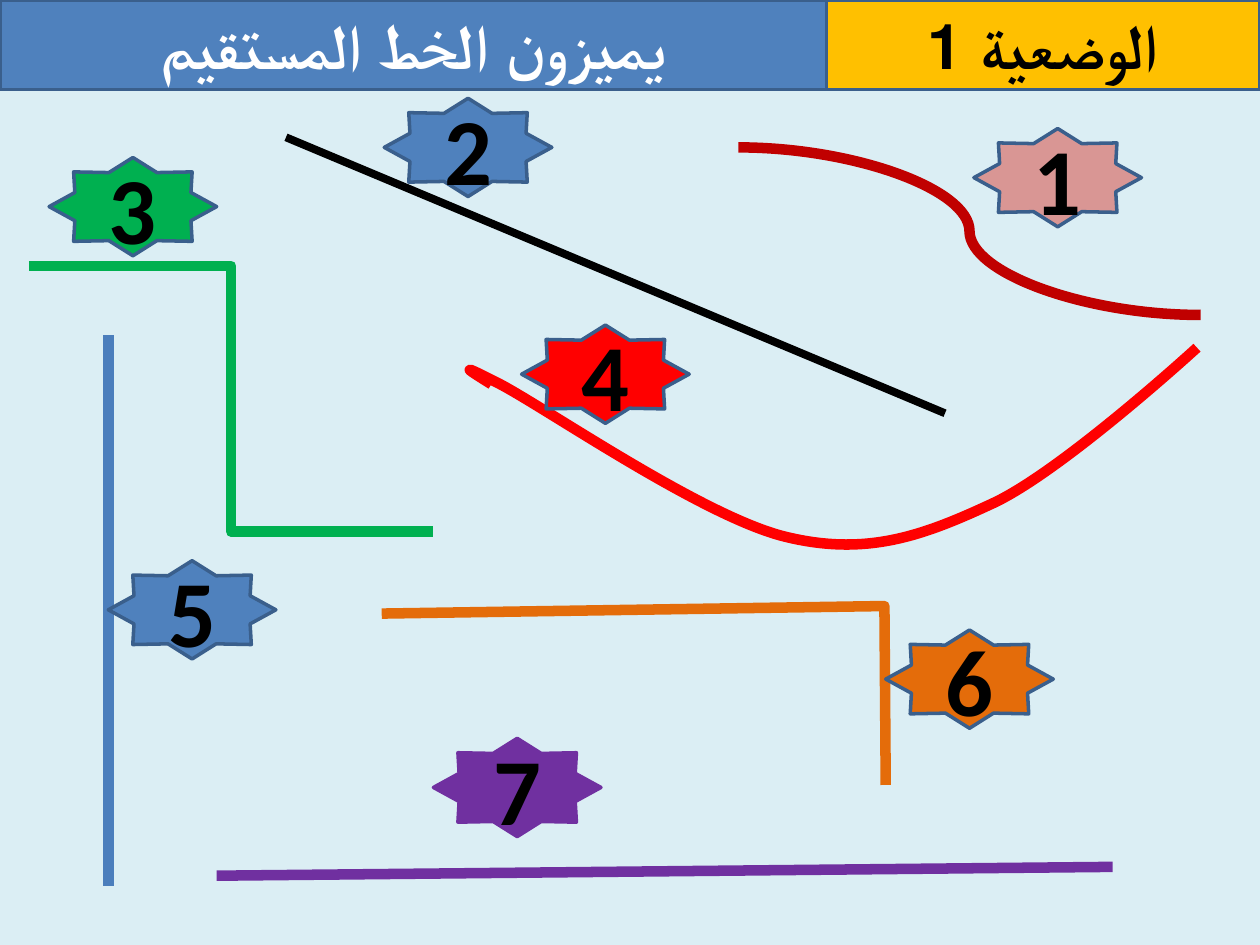
from lxml import etree
from pptx import Presentation
from pptx.dml.color import RGBColor
from pptx.enum.shapes import MSO_CONNECTOR, MSO_SHAPE
from pptx.enum.text import MSO_ANCHOR, MSO_AUTO_SIZE, PP_ALIGN
from pptx.oxml.ns import qn
from pptx.util import Inches, Pt

RECTANGLE, STAR = MSO_SHAPE.RECTANGLE, MSO_SHAPE.STAR_8_POINT
STRAIGHT, ELBOW, CURVE = MSO_CONNECTOR.STRAIGHT, MSO_CONNECTOR.ELBOW, MSO_CONNECTOR.CURVE
CENTER, TOP, MIDDLE = PP_ALIGN.CENTER, MSO_ANCHOR.TOP, MSO_ANCHOR.MIDDLE
FIT_SHAPE = MSO_AUTO_SIZE.SHAPE_TO_FIT_TEXT

BACKGROUND = RGBColor(0xDB, 0xEE, 0xF4)
OUTLINE = RGBColor(0x3A, 0x5F, 0x8C)
BLACK = RGBColor(0x00, 0x00, 0x00)
WHITE = RGBColor(0xFF, 0xFF, 0xFF)
BLUE = RGBColor(0x4F, 0x81, 0xBD)
LINE_BLUE = RGBColor(0x4B, 0x7E, 0xBC)
GOLD = RGBColor(0xFF, 0xC0, 0x00)
GREEN = RGBColor(0x00, 0xB0, 0x50)
RED = RGBColor(0xFF, 0x00, 0x00)
DARK_RED = RGBColor(0xC0, 0x00, 0x00)
PINK = RGBColor(0xD9, 0x96, 0x94)
ORANGE = RGBColor(0xE4, 0x6C, 0x0A)
PURPLE = RGBColor(0x70, 0x30, 0xA0)

HEADER_HEIGHT = 0.71
STAR_WIDTH, STAR_HEIGHT = 1.33, 0.78


def add_label(slide, kind, box, text, size, fill, color=BLACK, outline=OUTLINE):
    """Add a filled shape with one bold centred line of text."""
    label = slide.shapes.add_shape(kind, *map(Inches, box))
    label.shadow.inherit = False
    label.fill.solid()
    label.fill.fore_color.rgb = fill
    label.line.color.rgb = outline
    label.line.width = Pt(2)
    label.text_frame.vertical_anchor = MIDDLE
    paragraph = label.text_frame.paragraphs[0]
    paragraph.text = text
    paragraph.alignment = CENTER
    font = paragraph.font
    font.name, font.size, font.bold = "Calibri", Pt(size), True
    font.color.rgb = color
    return label


def add_header(slide, left, width, text, fill, color):
    """Add a right-to-left title block at the top of the slide."""
    header = add_label(slide, RECTANGLE, (left, 0, width, HEADER_HEIGHT), text, 36, fill, color)
    header.text_frame.vertical_anchor = TOP
    header.text_frame.auto_size = FIT_SHAPE
    header.text_frame.paragraphs[0]._p.get_or_add_pPr().set("rtl", "1")


def add_line(slide, kind, start, end, color, width=6):
    line = slide.shapes.add_connector(kind, *map(Inches, start + end))
    line.line.color.rgb = color
    line.line.width = Pt(width)
    etree.SubElement(line._element.spPr, qn("a:effectLst"))


def add_path(slide, points, color):
    """Add an open, unfilled path through the points."""
    start, *others = [(Inches(x), Inches(y)) for x, y in points]
    builder = slide.shapes.build_freeform(*start, scale=1.0)
    builder.add_line_segments(others, close=False)
    outline = builder.convert_to_shape()
    outline.shadow.inherit = False
    outline.fill.background()
    outline.line.color.rgb = color
    outline.line.width = Pt(6)
    return outline


def bend_path(outline):
    """Turn each three line segments of a path into one Bézier curve."""
    segments = list(outline._element.iter(qn("a:lnTo")))
    for i in range(0, len(segments), 3):
        curve = etree.Element(qn("a:cubicBezTo"))
        segments[i].addprevious(curve)
        for segment in segments[i:i + 3]:
            curve.append(segment[0])
            segment.getparent().remove(segment)


def main():
    presentation = Presentation()
    presentation.slide_width, presentation.slide_height = Inches(10), Inches(7.5)
    slide = presentation.slides.add_slide(presentation.slide_layouts[6])
    slide.background.fill.solid()
    slide.background.fill.fore_color.rgb = BACKGROUND

    # Title blocks
    add_header(slide, 0, 6.56, "يميزون الخط المستقيم", BLUE, WHITE)
    add_header(slide, 6.56, 3.44, "الوضعية 1", GOLD, BLACK)

    # Lines to tell apart
    add_line(slide, STRAIGHT, (2.27, 1.09), (7.5, 3.28), BLACK, 4.5)
    add_line(slide, ELBOW, (0.23, 2.11), (3.44, 4.22), GREEN)
    red_curve = add_path(slide, [
        (3.9, 3.05),
        (3.74, 2.95), (3.58, 2.85), (3.97, 3.05),
        (4.35, 3.25), (5.58, 4.1), (6.23, 4.26),
        (6.88, 4.42), (7.33, 4.25), (7.87, 4),
        (8.42, 3.75), (9.5, 2.76), (9.5, 2.76),
    ], RED)
    bend_path(red_curve)
    add_line(slide, STRAIGHT, (0.86, 2.66), (0.86, 7.03), LINE_BLUE)
    add_line(slide, STRAIGHT, (1.72, 6.95), (8.83, 6.88), PURPLE)
    add_line(slide, CURVE, (5.86, 1.17), (9.53, 2.5), DARK_RED)
    add_path(slide, [(3.03, 4.87), (7.02, 4.81), (7.03, 6.23)], ORANGE)

    # Numbered stars
    stars = [
        (7.73, 1.02, PINK, OUTLINE),
        (3.05, 0.78, BLUE, OUTLINE),
        (0.39, 1.25, GREEN, OUTLINE),
        (4.14, 2.58, RED, OUTLINE),
        (0.86, 4.45, BLUE, OUTLINE),
        (7.03, 5, ORANGE, OUTLINE),
        (3.44, 5.86, PURPLE, PURPLE),
    ]
    for number, (left, top, fill, outline) in enumerate(stars, start=1):
        add_label(slide, STAR, (left, top, STAR_WIDTH, STAR_HEIGHT), str(number), 54,
                  fill, outline=outline)

    presentation.save("out.pptx")


if __name__ == "__main__":
    main()
